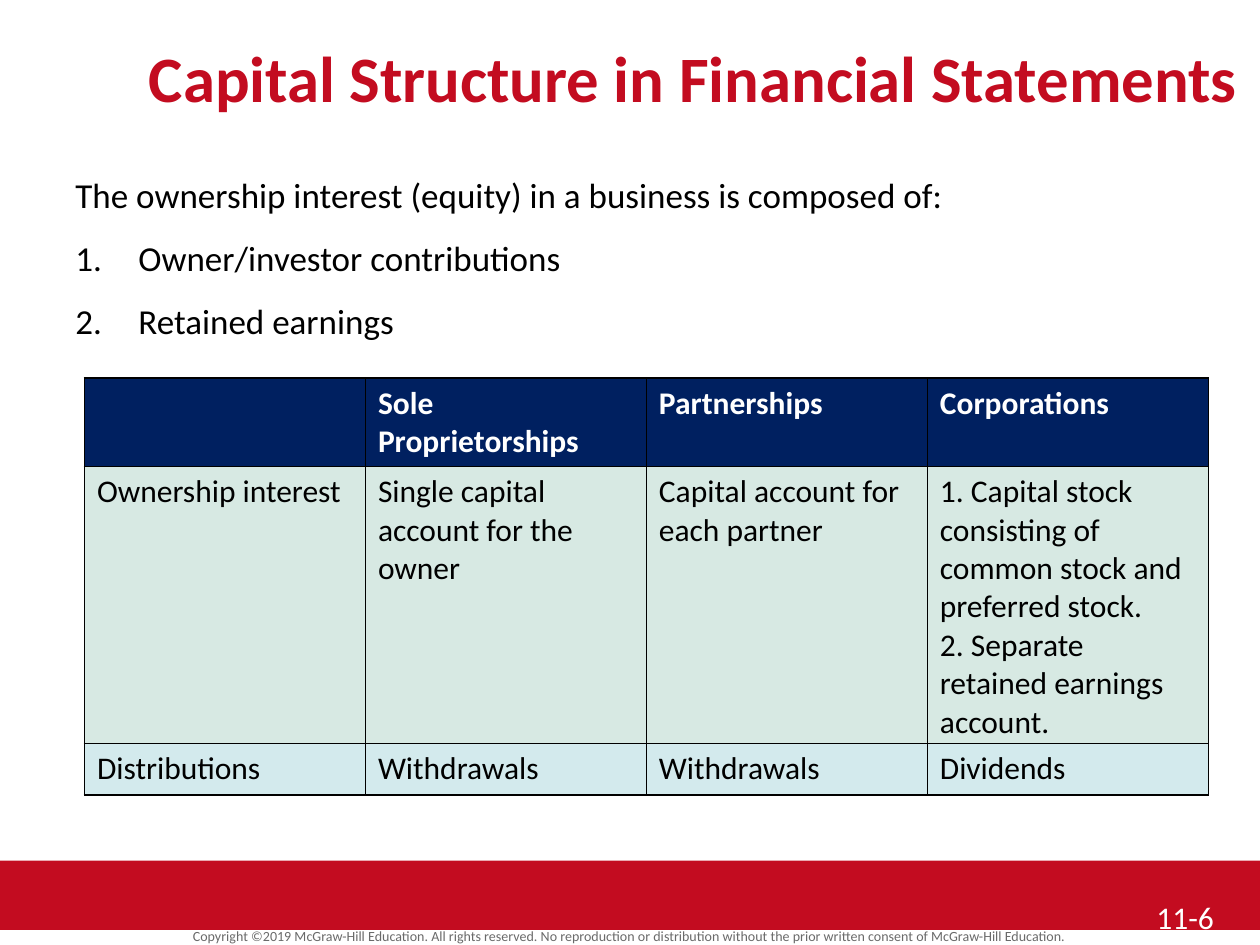
from lxml.etree import SubElement
from pptx import Presentation
from pptx.dml.color import RGBColor
from pptx.enum.shapes import MSO_SHAPE as Shape
from pptx.enum.text import MSO_ANCHOR as Anchor, MSO_AUTO_SIZE as AutoSize, PP_ALIGN as Align
from pptx.oxml.ns import qn
from pptx.util import Inches, Pt

RED, NAVY, GREEN, BLUE = "C30C20", "002060", "D7E9E3", "D3EAED"
BLACK, WHITE, GRAY = "000000", "FFFFFF", "6A6A6A"

INTRO = "The ownership interest (equity) in a business is composed of:"
COMPONENTS = ["Owner/investor contributions", "Retained earnings"]
COPYRIGHT = (
    "Copyright ©2019 McGraw-Hill Education. All rights reserved. No reproduction or "
    "distribution without the prior written consent of McGraw-Hill Education."
)
ENTITY_ROWS = [
    ["", "Sole Proprietorships", "Partnerships", "Corporations"],
    [
        "Ownership interest",
        "Single capital account for the owner",
        "Capital account for each partner",
        "1. Capital stock consisting of common stock and preferred stock.\n"
        "2. Separate retained earnings account.",
    ],
    ["Distributions", "Withdrawals", "Withdrawals", "Dividends"],
]
ROW_STYLES = [(0.7, NAVY), (2.2, GREEN), (0.41, BLUE)]


def rgb(color):
    return RGBColor.from_string(color)


def write(frame, text, size=18, color=BLACK, bold=False, align=Align.LEFT,
          line_spacing=None, before=None, after=None, numbered_from=None):
    """Fill a frame, one paragraph a line; number those from index numbered_from on."""
    frame.word_wrap = True
    frame.text = text
    for index, paragraph in enumerate(frame.paragraphs):
        if numbered_from is not None and index >= numbered_from:
            number(paragraph)
        paragraph.alignment = align
        paragraph.line_spacing = line_spacing
        paragraph.space_before = before if index else None
        paragraph.space_after = after
        font = paragraph.font
        font.name, font.size, font.bold = "Calibri", Pt(size), bold
        font.color.rgb = rgb(color)


def number(paragraph):
    properties = paragraph._p.get_or_add_pPr()
    properties.set("marL", str(Inches(0.5)))
    properties.set("indent", str(Inches(-0.5)))
    SubElement(properties, qn("a:buFont"), typeface="+mj-lt")
    SubElement(properties, qn("a:buAutoNum"), type="arabicPeriod")


def add_text(slide, left, top, width, height, text, **text_format):
    box = slide.shapes.add_textbox(Inches(left), Inches(top), Inches(width), Inches(height))
    write(box.text_frame, text, **text_format)


def set_title(slide, text):
    title = slide.shapes.title
    title.left, title.top = Inches(1), Inches(0.25)
    title.width, title.height = Inches(9), Inches(0.67)
    title.text_frame.auto_size = AutoSize.NONE
    title.text_frame.vertical_anchor = Anchor.TOP
    write(title.text_frame, text, size=37, color=RED, bold=True, align=Align.CENTER)


def add_footer_band(slide):
    band = slide.shapes.add_shape(Shape.RECTANGLE, 0, Inches(6.83), Inches(10), Inches(0.55))
    band.shadow.inherit = False
    band.fill.solid()
    band.fill.fore_color.rgb = rgb(RED)
    band.line.fill.background()


def fill_cell(cell, color):
    """Give the cell black one-point borders and a solid fill."""
    properties = cell._tc.get_or_add_tcPr()
    for side in ("a:lnL", "a:lnR", "a:lnT", "a:lnB"):
        border = SubElement(properties, qn(side), w=str(Pt(1)))
        SubElement(SubElement(border, qn("a:solidFill")), qn("a:srgbClr"), val=BLACK)
    cell.fill.solid()
    cell.fill.fore_color.rgb = rgb(color)


def add_entity_table(slide):
    height = sum(row_height for row_height, _ in ROW_STYLES)
    table = slide.shapes.add_table(len(ENTITY_ROWS), len(ENTITY_ROWS[0]), Inches(0.67),
                                   Inches(3), Inches(8.92), Inches(height)).table
    for row, texts, (row_height, color) in zip(table.rows, ENTITY_ROWS, ROW_STYLES):
        row.height = Inches(row_height)
        is_header = color == NAVY
        for cell, text in zip(row.cells, texts):
            write(cell.text_frame, text, color=WHITE if is_header else BLACK, bold=is_header)
            fill_cell(cell, color)


def main():
    deck = Presentation()
    deck.slide_width, deck.slide_height = Inches(10), Inches(7.5)
    slide = deck.slides.add_slide(deck.slide_layouts[5])
    add_footer_band(slide)
    add_text(slide, 0, 7.34, 10, 0.19, COPYRIGHT, size=8, color=GRAY,
             align=Align.CENTER, line_spacing=0.8)
    set_title(slide, "Capital Structure in Financial Statements")
    add_text(slide, 0.5, 1.33, 9, 5.17, "\n".join([INTRO, *COMPONENTS]), size=20,
             before=Pt(4), after=Pt(8), numbered_from=1)
    add_text(slide, 9.08, 7.08, 0.92, 0.42, "11-6", color=WHITE)
    add_entity_table(slide)
    deck.save("out.pptx")


if __name__ == "__main__":
    main()
